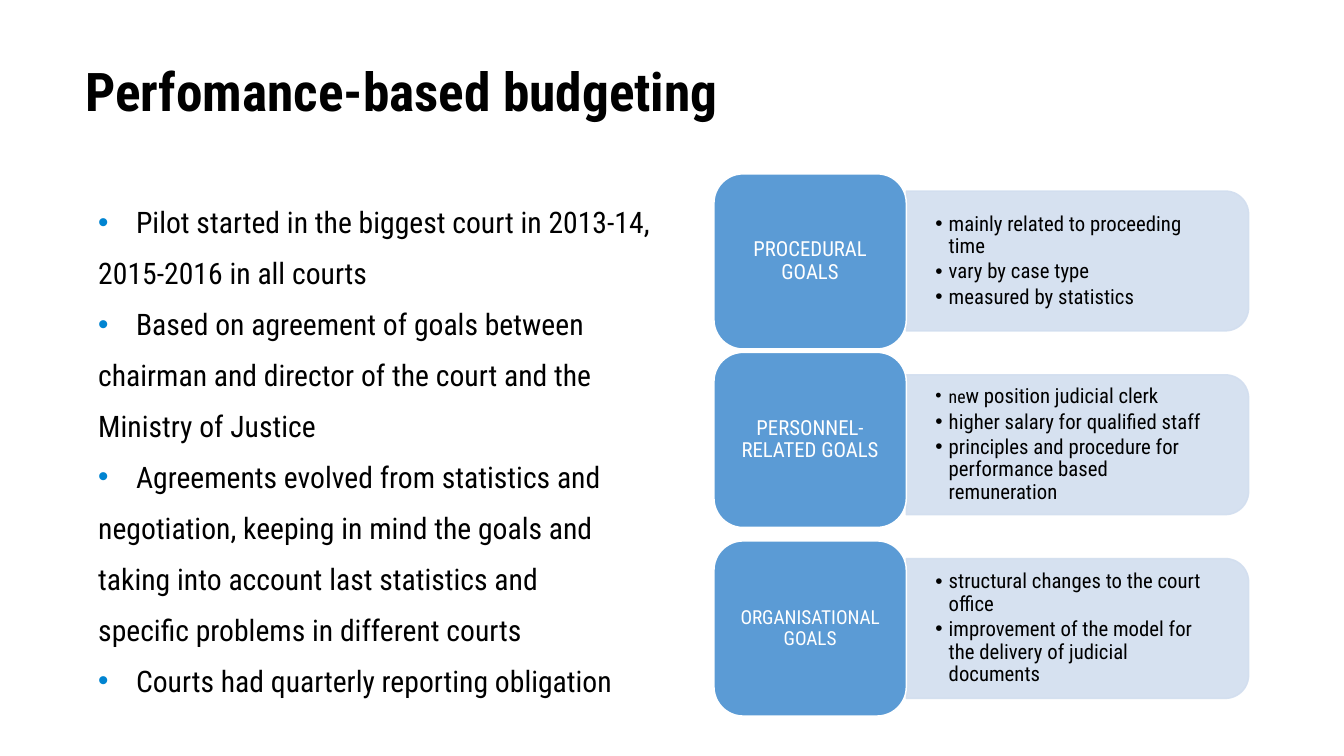
from lxml import etree
from pptx import Presentation
from pptx import util as u
from pptx.dml.color import RGBColor
from pptx.enum import shapes, text
from pptx.oxml import ns

BLACK = RGBColor(0x00, 0x00, 0x00)
WHITE = RGBColor(0xFF, 0xFF, 0xFF)
BLUE = RGBColor(0x5B, 0x9B, 0xD5)
PALE = RGBColor(0xD2, 0xDE, 0xEF)
DOT = RGBColor(0x00, 0x84, 0xD1)
FONT = "Roboto Condensed"

TITLE = "Perfomance-based budgeting"
POINTS = [
    ["Pilot started in the biggest court in 2013-14,", "2015-2016 in all courts"],
    ["Based on agreement of goals between",
     "chairman and director of the court and the", "Ministry of Justice"],
    ["Agreements evolved from statistics and",
     "negotiation, keeping in mind the goals and",
     "taking into account last statistics and",
     "specific problems in different courts"],
    ["Courts had quarterly reporting obligation"],
]
GOALS = [
    (4.14, "PROCEDURAL GOALS", 14,
     [[("mainly related to proceeding time", 14)],
      [("vary by case type", 14)],
      [("measured by statistics", 14)]]),
    (8.39, "PERSONNEL-RELATED GOALS", 14,
     [[("ne", 12), ("w position judicial clerk", 14)],
      [("higher salary for qualified staff", 14)],
      [("principles and procedure for performance based remuneration", 14)]]),
    (12.88, "ORGANISATIONAL GOALS", 13,
     [[("structural changes to the court office", 14)],
      [("improvement of the model for the delivery of judicial documents", 14)]]),
]


def apply(obj, vals):
    for key, val in vals.items():
        setattr(obj, key, val)


def cms(*vals):
    return [u.Cm(val) for val in vals]


def frame(shape, anchor, side, top):
    apply(shape.text_frame, {
        "word_wrap": True, "auto_size": text.MSO_AUTO_SIZE.NONE,
        "vertical_anchor": anchor,
        "margin_left": u.Cm(side), "margin_right": u.Cm(side),
        "margin_top": u.Cm(top), "margin_bottom": u.Cm(top)})
    return shape.text_frame


def write(para, runs, color, fmt, bold=False):
    apply(para, fmt)
    for words, size in runs:
        run = para.add_run()
        run.text = words
        apply(run.font, {"name": FONT, "size": u.Pt(size), "bold": bold})
        run.font.color.rgb = color


def fill(frm, rows, color, fmt):
    for num, runs in enumerate(rows):
        para = frm.add_paragraph() if num else frm.paragraphs[0]
        write(para, runs, color, fmt)


def indent(para, left, hang, color=None):
    props = para._p.get_or_add_pPr()
    props.set("marL", str(u.Cm(left)))
    props.set("indent", str(u.Cm(-hang)))
    if color is not None:
        tint = etree.SubElement(props, ns.qn("a:buClr"))
        etree.SubElement(tint, ns.qn("a:srgbClr"), val=str(color))
        etree.SubElement(props, ns.qn("a:buFont"), typeface="Arial")
        etree.SubElement(props, ns.qn("a:buChar"), char="•")


def block(slide, kind, box, color, edge):
    shape = slide.shapes.add_shape(kind, *cms(*box))
    shape.shadow.inherit = False
    shape.fill.solid()
    shape.fill.fore_color.rgb = color
    shape.line.color.rgb = edge
    shape.line.width = u.Pt(1)
    return shape


def head(slide, box):
    title = slide.shapes.title
    apply(title, dict(zip(("left", "top", "width", "height"), cms(*box))))
    frm = frame(title, text.MSO_ANCHOR.TOP, 0.25, 0.16)
    write(frm.paragraphs[0], [(TITLE, 36)], BLACK,
          {"alignment": text.PP_ALIGN.LEFT, "line_spacing": 0.88}, True)


def body(slide, box):
    frm = frame(slide.shapes.add_textbox(*cms(*box)),
                text.MSO_ANCHOR.TOP, 0.25, 0.13)
    fill(frm, [[(line, 20)] for point in POINTS for line in point], BLACK,
         {"line_spacing": 1.1, "space_after": u.Pt(8)})
    paras = iter(frm.paragraphs)
    for point in POINTS:
        indent(next(paras), 1.21, 0.9, DOT)
        for _ in point[1:]:
            indent(next(paras), 0.31, 0)


def card(slide, box, rows):
    left, top, wide, high = box
    turn = (left + (wide - high) / 2, top + (high - wide) / 2, high, wide)
    shape = block(slide, shapes.MSO_SHAPE.ROUND_2_SAME_RECTANGLE,
                  turn, PALE, PALE)
    shape.rotation = 90
    for tint in shape._element.spPr.iter(ns.qn("a:srgbClr")):
        etree.SubElement(tint, ns.qn("a:alpha"), val="90000")
    area = slide.shapes.add_textbox(
        *cms(left, top + 0.16, wide - 0.16, high - 0.32))
    frm = frame(area, text.MSO_ANCHOR.MIDDLE, 0.69, 0.35)
    fill(frm, rows, BLACK, {"line_spacing": 0.9, "space_after": u.Pt(2)})
    for para in frm.paragraphs:
        indent(para, 0.32, 0.32, BLACK)


def label(slide, box, words, size):
    shape = block(slide, shapes.MSO_SHAPE.ROUNDED_RECTANGLE, box, BLUE, WHITE)
    frm = frame(shape, text.MSO_ANCHOR.MIDDLE, 0.14, 0.08)
    write(frm.paragraphs[0], [(words, size)], WHITE,
          {"alignment": text.PP_ALIGN.CENTER, "line_spacing": 0.9})


def goals(slide, box):
    left, top, wide, high = box
    tall, part = 3.33, 4.58
    step = (high - tall) / (len(GOALS) - 1)
    for num, (spot, words, size, rows) in enumerate(GOALS):
        card(slide, (left + part, top + num * step, wide - part, tall), rows)
        label(slide, (left, spot, part, 4.17), words, size)


def main():
    deck = Presentation()
    apply(deck, {"slide_width": u.Cm(32), "slide_height": u.Cm(18)})
    slide = deck.slides.add_slide(deck.slide_layouts[5])
    head(slide, (1.78, 1.42, 28.17, 2.84))
    body(slide, (1.78, 4.65, 14.8, 12.2))
    goals(slide, (17, 4.55, 12.73, 12.08))
    deck.save("out.pptx")


if __name__ == "__main__":
    main()
